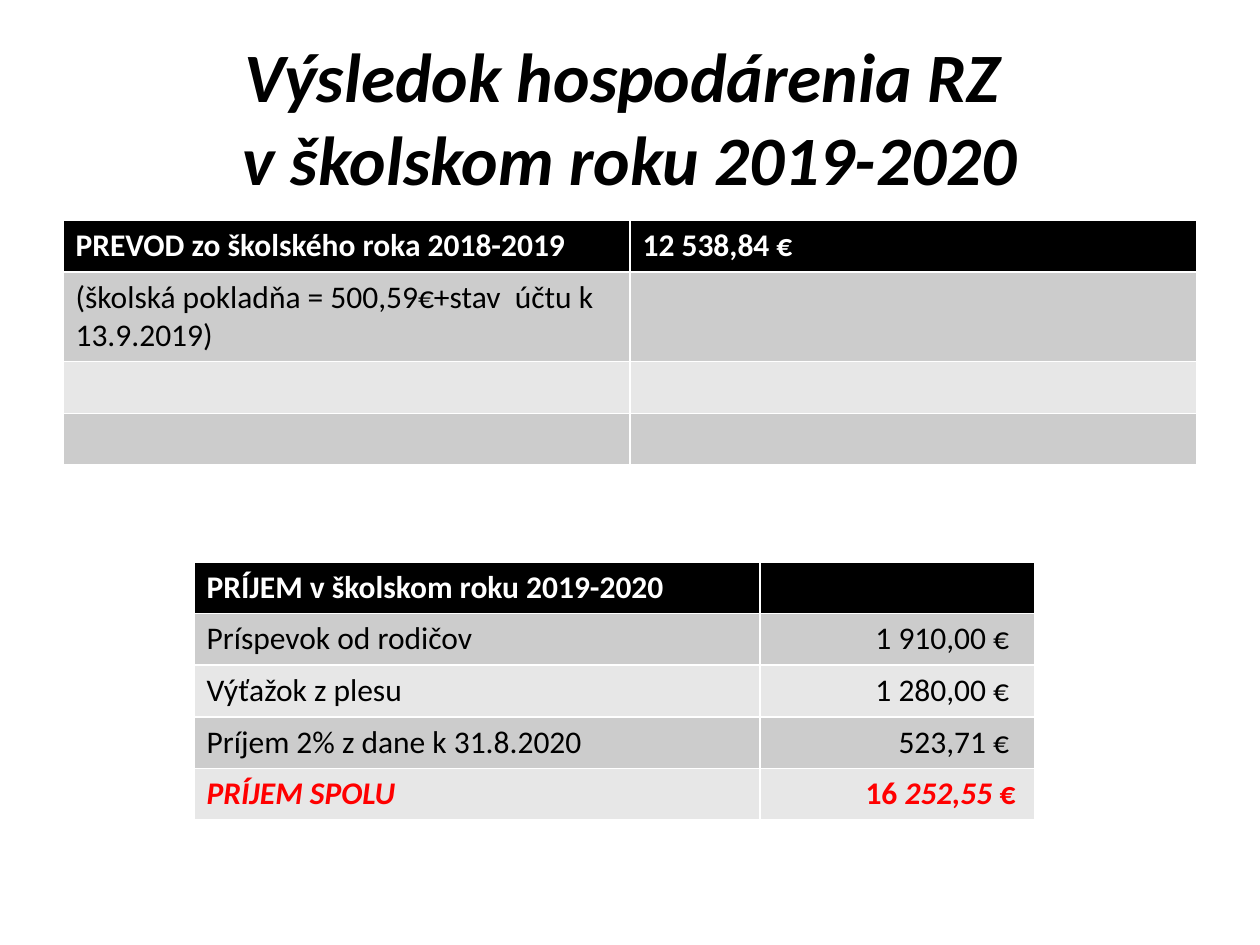
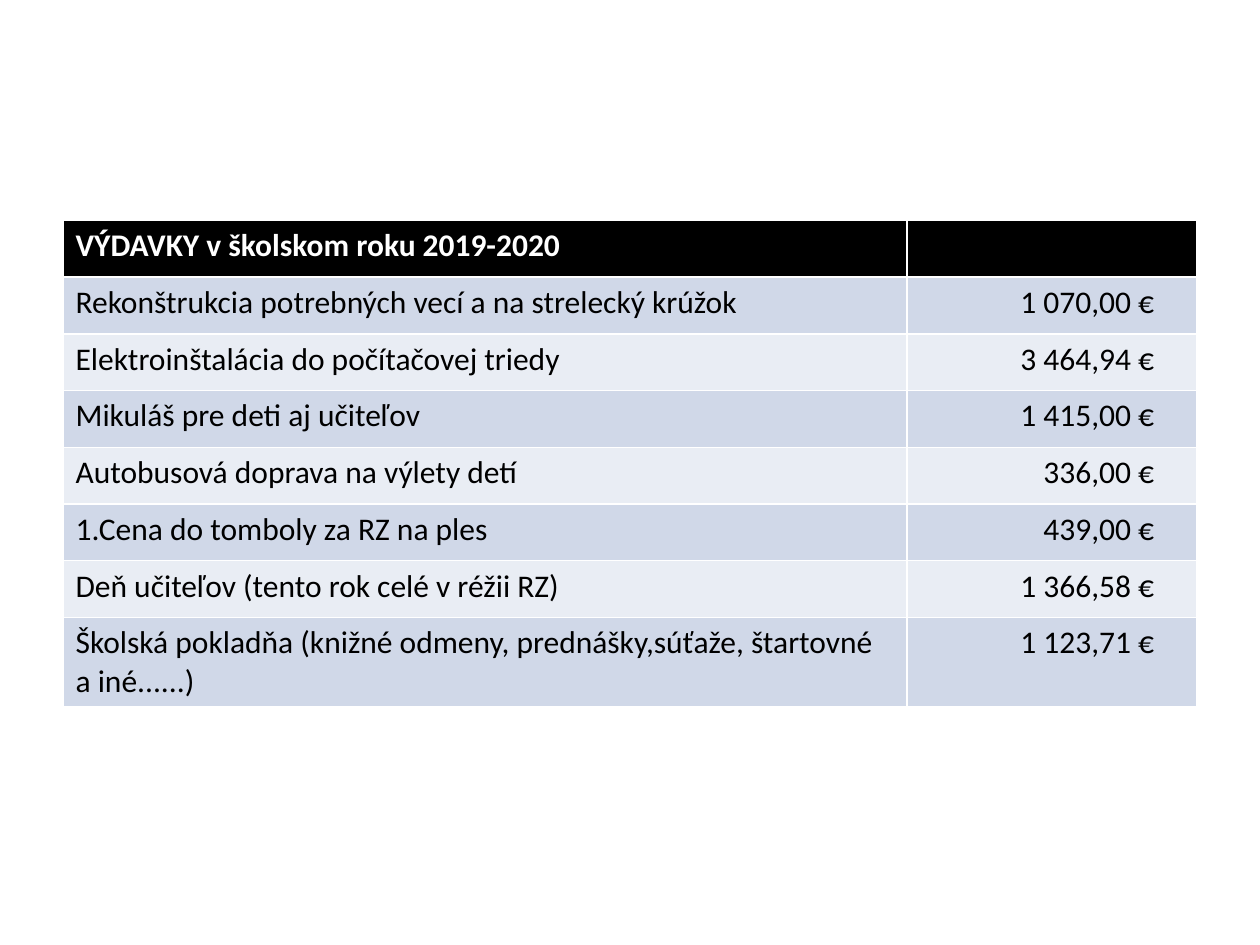
import pptx
import pptx.util
import pptx.dml.color
import pptx.enum.text
from dataclasses import dataclass

Inches = pptx.util.Inches
Align = pptx.enum.text.PP_ALIGN
Anchor = pptx.enum.text.MSO_ANCHOR


@dataclass(frozen=True)
class Theme:
    font: str = "Calibri"
    title: float = 39.6
    body: float = 18
    black: str = "000000"
    white: str = "FFFFFF"
    red: str = "FF0000"
    grey: tuple = ("CCCCCC", "E7E7E7")
    blue: tuple = ("D0D8E8", "E9EDF4")


theme = Theme()


def style(run, size, color, bold=False, italic=False):
    font = run.font
    font.name = theme.font
    font.size = pptx.util.Pt(size)
    font.color.rgb = pptx.dml.color.RGBColor.from_string(color)
    font.bold = bold
    font.italic = italic


def add_grid(slide, left, top, widths, height, rows, bands, inset):
    """Black header, banded rows, amounts right-aligned at the inset."""
    frame = slide.shapes.add_table(
        len(rows), len(widths), Inches(left), Inches(top),
        Inches(sum(widths)), Inches(height * len(rows)))
    table = frame.table
    for col, width in zip(table.columns, widths):
        col.width = Inches(width)
    for r, row in enumerate(rows):
        table.rows[r].height = Inches(height)
        fill = bands[(r - 1) % 2] if r else theme.black
        color = theme.white if r == 0 else theme.black
        for c, text in enumerate(row):
            cell = table.cell(r, c)
            cell.fill.solid()
            cell.fill.fore_color.rgb = pptx.dml.color.RGBColor.from_string(fill)
            if not text:
                continue
            cell.text_frame.text = text
            para = cell.text_frame.paragraphs[0]
            style(para.runs[0], theme.body, color, bold=r == 0)
            if r and c:
                para.alignment = Align.RIGHT
                cell.margin_right = Inches(inset)
    return table


deck = pptx.Presentation()
deck.slide_width = Inches(10)
deck.slide_height = Inches(7.5)

# Slide 1: title
slide = deck.slides.add_slide(deck.slide_layouts[5])
title = slide.shapes.title
title.left, title.top = Inches(0.5), Inches(0.3)
title.width, title.height = Inches(9), Inches(1.25)
frame = title.text_frame
frame.text = "Výsledok hospodárenia RZ \vv školskom roku 2019-2020"
frame.auto_size = pptx.enum.text.MSO_AUTO_SIZE.NONE
frame.vertical_anchor = Anchor.MIDDLE
para = frame.paragraphs[0]
para.alignment = Align.CENTER
for run in para.runs:
    style(run, theme.title, theme.black, bold=True, italic=True)

# Balance carried over
carry = [
    ("PREVOD zo školského roka 2018-2019", "12 538,84 €"),
    ("(školská pokladňa = 500,59€+stav  účtu k 13.9.2019)", ""),
    ("", ""),
    ("", ""),
]
add_grid(slide, 0.5, 1.75, (4.5, 4.5), 0.41, carry, theme.grey, 0.1)

# Income, with the total in red
income = [
    ("PRÍJEM v školskom roku 2019-2020", ""),
    ("Príspevok od rodičov", "1 910,00 €"),
    ("Výťažok z plesu", "1 280,00 €"),
    ("Príjem 2% z dane k 31.8.2020", "523,71 €"),
    ("PRÍJEM SPOLU", "16 "),
]
table = add_grid(slide, 1.54, 4.46, (4.49, 2.18), 0.41, income, theme.grey, 0.2)
label, total = table.rows[len(income) - 1].cells
total.margin_right = Inches(0.15)
style(label.text_frame.paragraphs[0].runs[0], theme.body, theme.red, True, True)
para = total.text_frame.paragraphs[0]
style(para.runs[0], theme.body, theme.red, True)
for text, slant in (("252,55", True), (" €", False)):
    run = para.add_run()
    run.text = text
    style(run, theme.body, theme.red, True, slant)

# Slide 2: spending
slide = deck.slides.add_slide(deck.slide_layouts[6])
costs = [
    ("VÝDAVKY v školskom roku 2019-2020", ""),
    ("Rekonštrukcia potrebných vecí a na strelecký krúžok", "1 070,00 €"),
    ("Elektroinštalácia do počítačovej triedy", "3 464,94 €"),
    ("Mikuláš pre deti aj učiteľov", "1 415,00 €"),
    ("Autobusová doprava na výlety detí", "336,00 €"),
    ("1.Cena do tomboly za RZ na ples", "439,00 €"),
    ("Deň učiteľov (tento rok celé v réžii RZ)", "1 366,58 €"),
    ("Školská pokladňa (knižné odmeny, prednášky,súťaže, štartovné a iné......)",
     "1 123,71 €"),
]
add_grid(slide, 0.5, 1.75, (6.7, 2.3), 0.45, costs, theme.blue, 0.34)

deck.save("out.pptx")
